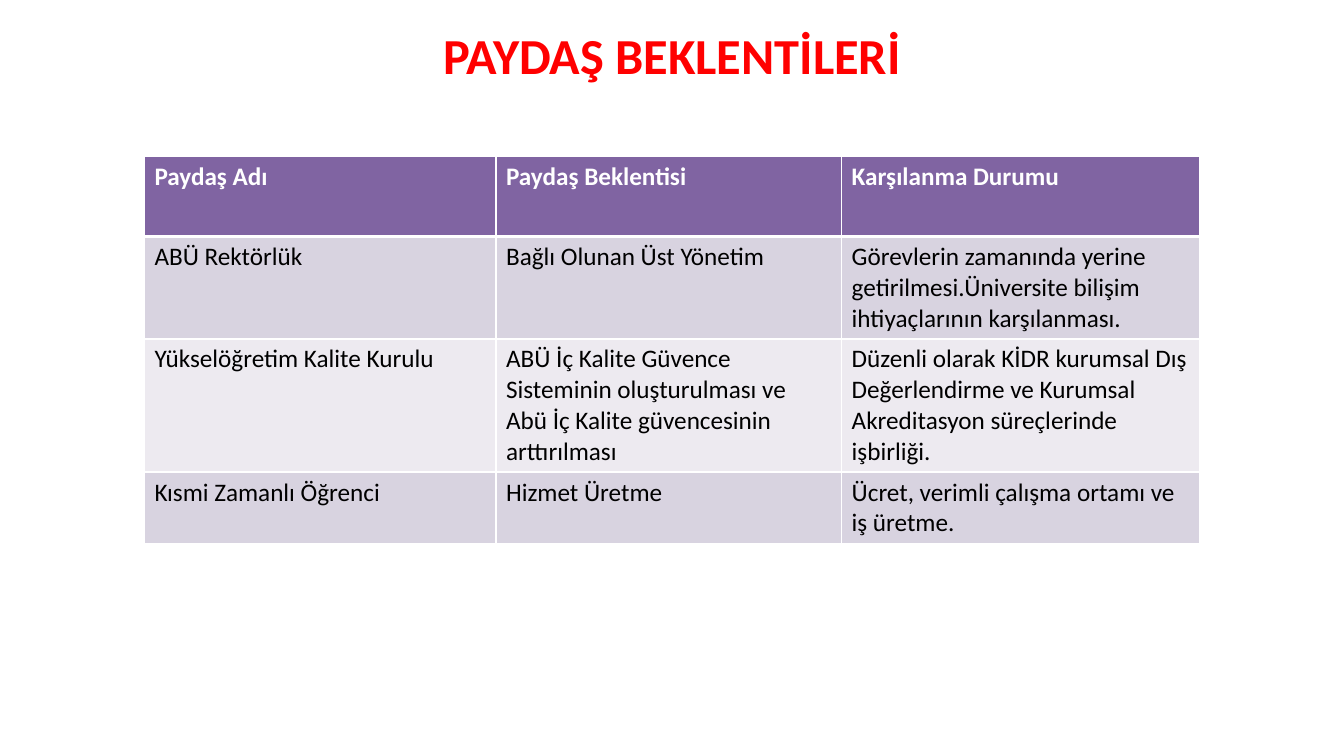
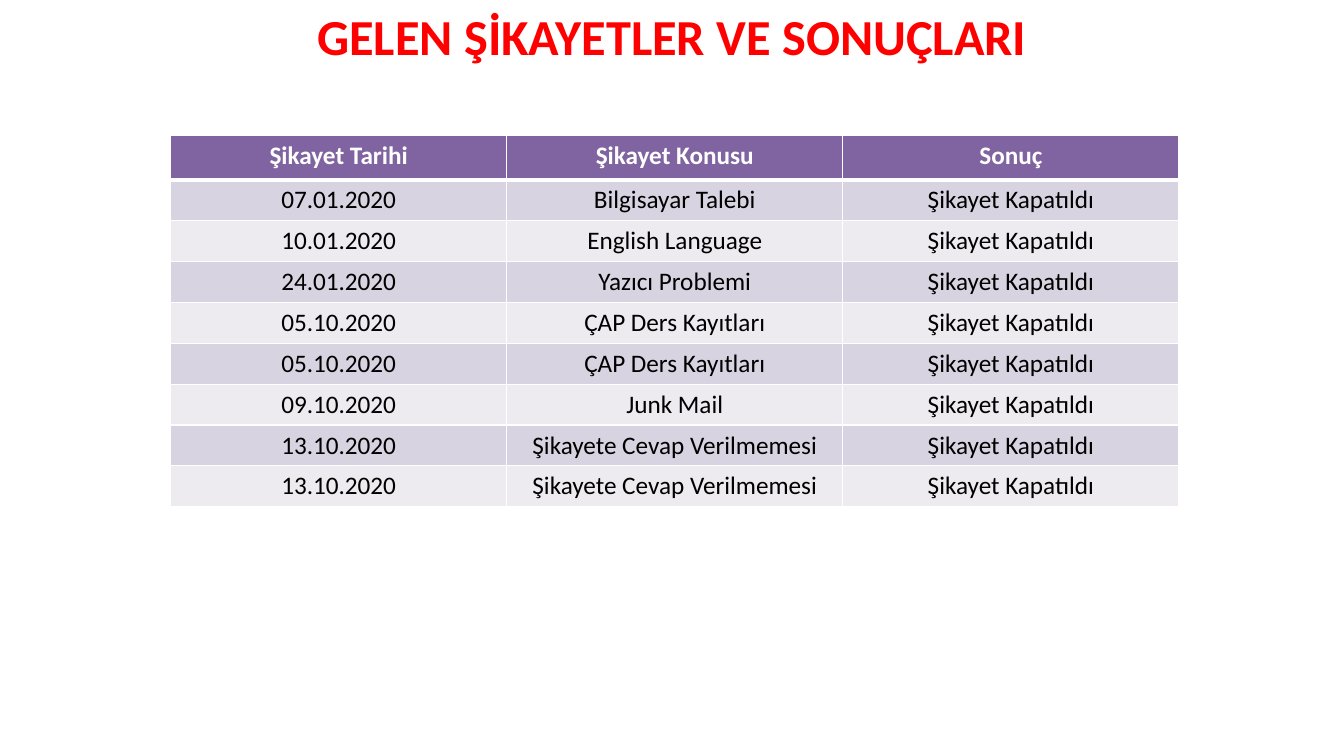
"""Build two slides on stakeholder expectations and complaints."""
from dataclasses import dataclass
from itertools import accumulate

from lxml import etree
from pptx import Presentation
from pptx.dml.color import RGBColor
from pptx.enum import text as tx
from pptx.oxml import ns
from pptx.util import Cm, Pt


@dataclass(frozen=True)
class Theme:
    font: str = "Calibri"
    title: str = "FF0000"
    head: str = "8064A2"
    odd: str = "D8D3E0"
    even: str = "EDEAF0"
    light: str = "FFFFFF"
    dark: str = "000000"
    big: int = 36
    body: int = 18
    thin: int = 1
    thick: int = 3


T = Theme()
LEFT, MID = tx.PP_ALIGN.LEFT, tx.PP_ALIGN.CENTER
DONE = "Şikayet Kapatıldı"
CASES = [
    ("07.01.2020", "Bilgisayar Talebi"),
    ("10.01.2020", "English Language"),
    ("24.01.2020", "Yazıcı Problemi"),
    ("05.10.2020", "ÇAP Ders Kayıtları"),
    ("05.10.2020", "ÇAP Ders Kayıtları"),
    ("09.10.2020", "Junk Mail"),
    ("13.10.2020", "Şikayete Cevap Verilmemesi"),
    ("13.10.2020", "Şikayete Cevap Verilmemesi"),
]
SLIDES = [
    {
        "title": "PAYDAŞ BEKLENTİLERİ", "top": 0.46,
        "at": (3.64, 3.94), "align": LEFT,
        "cols": [8.86, 8.71, 9.02], "rows": [2.02, 2.57, 3.35, 1.8],
        "cells": [
            ("Paydaş Adı", "Paydaş Beklentisi", "Karşılanma Durumu"),
            ("ABÜ Rektörlük", "Bağlı Olunan Üst Yönetim",
             "Görevlerin zamanında yerine getirilmesi.Üniversite bilişim "
             "ihtiyaçlarının karşılanması."),
            ("Yükselöğretim Kalite Kurulu",
             "ABÜ İç Kalite Güvence Sisteminin oluşturulması ve "
             "Abü İç Kalite güvencesinin arttırılması",
             "Düzenli olarak KİDR kurumsal Dış Değerlendirme ve Kurumsal "
             "Akreditasyon süreçlerinde işbirliği."),
            ("Kısmi Zamanlı Öğrenci", "Hizmet Üretme",
             "Ücret, verimli çalışma ortamı ve iş üretme."),
        ],
    },
    {
        "title": "GELEN ŞİKAYETLER VE SONUÇLARI", "top": 0,
        "at": (4.3, 3.42), "align": MID,
        "cols": [8.47] * 3, "rows": [1.11] + [1.03] * len(CASES),
        "cells": [("Şikayet Tarihi", "Şikayet Konusu", "Sonuç")]
        + [(*case, DONE) for case in CASES],
    },
]


def write(frame, words, size=T.body, color=T.dark, bold=False, align=LEFT):
    frame.word_wrap = True
    para = frame.paragraphs[0]
    para.alignment = align
    run = para.add_run()
    run.text = words
    font = run.font
    font.name, font.size, font.bold = T.font, Pt(size), bold
    font.color.rgb = RGBColor.from_string(color)


def edge(cell, **sides):
    props = cell._tc.get_or_add_tcPr()
    for side, width in sides.items():
        line = etree.SubElement(props, ns.qn(f"a:ln{side}"), w=str(Pt(width)))
        fill = etree.SubElement(line, ns.qn("a:solidFill"))
        etree.SubElement(fill, ns.qn("a:srgbClr"), val=T.light)


def add_grid(slide, data):
    cells, cols, rows = data["cells"], data["cols"], data["rows"]
    left, top = data["at"]
    grid = slide.shapes.add_table(
        len(rows), len(cols), Cm(left), Cm(top),
        Cm(sum(cols)), Cm(sum(rows))).table
    for col, width in zip(grid.columns, cols):
        col.width = Cm(width)
    for row, high in zip(grid.rows, rows):
        row.height = Cm(high)
    for r, line in enumerate(cells):
        head = r == 0
        shade = T.head if head else (T.even, T.odd)[r % 2]
        for c, words in enumerate(line):
            cell = grid.cell(r, c)
            edge(cell, L=T.thin, R=T.thin,
                 T=T.thick if r == 1 else T.thin,
                 B=T.thick if head else T.thin)
            cell.fill.solid()
            cell.fill.fore_color.rgb = RGBColor.from_string(shade)
            write(cell.text_frame, words, bold=head, align=data["align"],
                  color=T.light if head else T.dark)


def add_title(slide, data):
    title = slide.shapes.title
    title.left, title.top = Cm(7.24), Cm(data["top"])
    title.width, title.height = Cm(19.4), Cm(1.8)
    frame = title.text_frame
    frame.auto_size = tx.MSO_AUTO_SIZE.NONE
    frame.vertical_anchor = tx.MSO_ANCHOR.MIDDLE
    write(frame, data["title"], size=T.big, color=T.title, bold=True, align=MID)


def main():
    deck = Presentation()
    deck.slide_width, deck.slide_height = Cm(33.87), Cm(19.05)
    for data in SLIDES:
        slide = deck.slides.add_slide(deck.slide_layouts[5])
        add_title(slide, data)
        add_grid(slide, data)
    deck.save("out.pptx")


if __name__ == "__main__":
    main()
